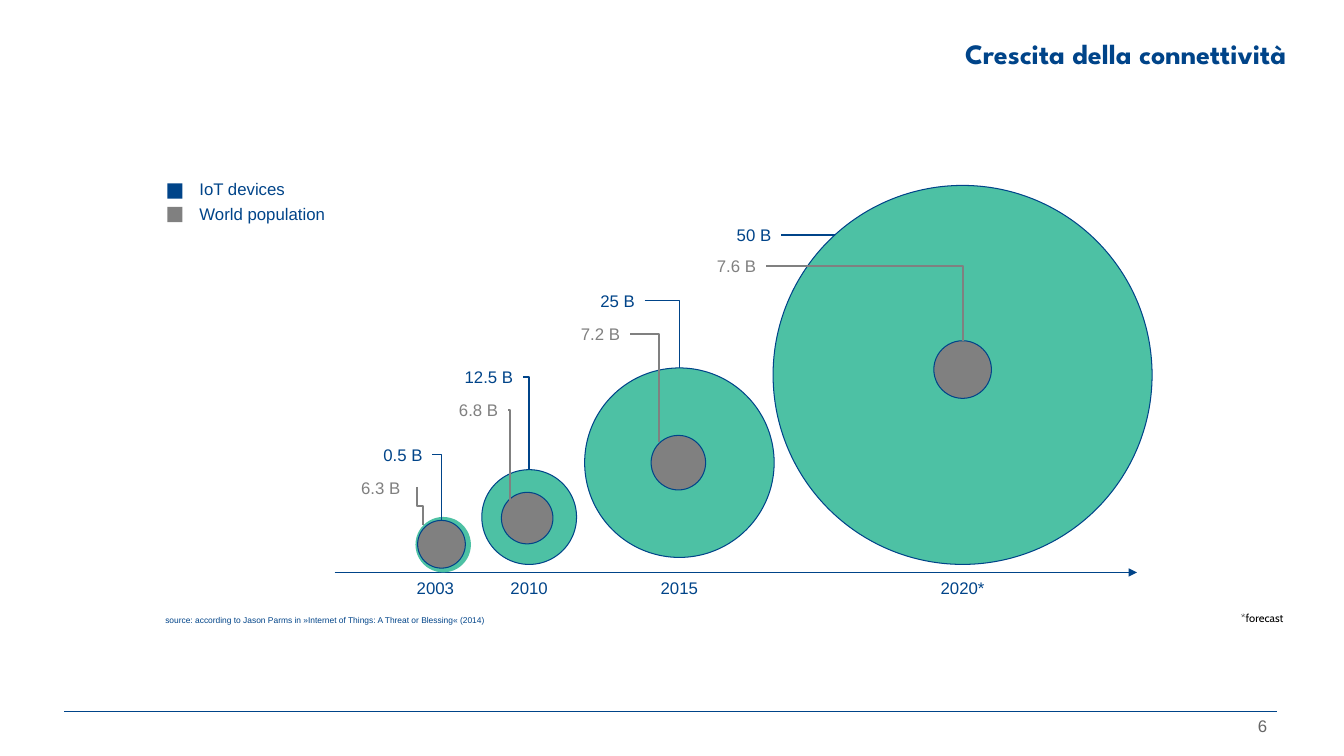
from pptx import Presentation
from pptx.dml.color import RGBColor
from pptx.enum.shapes import MSO_CONNECTOR as CONN, MSO_SHAPE as SHAPE
from pptx.enum.text import MSO_ANCHOR as ANCHOR, PP_ALIGN as ALIGN
from pptx.oxml.ns import qn
from pptx.util import Inches, Pt
from lxml.etree import SubElement

COLORS = {"blue": "004489", "green": "4DC1A4", "gray": "808080",
          "number": "666666", "black": "000000"}
W, H = Inches(13.333), Inches(7.5)
COLS = 40                 # square grid: 40 columns, 22.5 rows
PER_BILLION = 11.28 / 50  # bubble diameter in columns per billion
AXIS = 17.04              # row of the time axis

# year, label centre, devices (centre, row, diameter), people (centre, row, billions)
YEARS = [
    ("2015", 20.22, (20.22, 13.77, 25 * PER_BILLION), (20.19, 13.77, 7.2)),
    ("2020*", 28.65, (28.65, 11.16, 50 * PER_BILLION), (28.65, 11, 7.6)),
    ("2010", 15.75, (15.75, 15.39, 12.5 * PER_BILLION), (15.69, 15.42, 6.8)),
    ("2003", 12.96, (13.19, 16.21, 1.65), (13.14, 16.2, 6.3)),
]

# text, colour, left, right, middle row, point that the elbow reaches
CALLOUTS = [
    ("0.5 B", "blue", 7.56, 12.87, 13.53, (13.14, 15.51)),
    ("6.8 B", "gray", 9.06, 15.12, 12.21, (15.18, 14.91)),
    ("12.5 B", "blue", 9.63, 15.57, 11.22, (15.75, 13.98)),
    ("7.2 B", "gray", 13.35, 18.75, 9.95, (19.62, 13.17)),
    ("25 B", "blue", 13.77, 19.19, 8.95, (20.22, 10.95)),
    ("7.6 B", "gray", 16.53, 22.8, 7.92, (28.65, 10.14)),
]
LABEL_ROWS = 0.9


def grid(n):
    return round(n * W / COLS)


def rgb(name):
    return RGBColor.from_string(COLORS[name])


def add_text(s, text, x, y, w, h, color="blue", size=12, font="Arial",
             align=ALIGN.LEFT, anchor=ANCHOR.TOP, bold=False, tight=False):
    sp = s.shapes.add_textbox(*map(grid, (x, y, w, h)))
    tf = sp.text_frame
    tf.word_wrap = not tight
    tf.vertical_anchor = anchor
    if tight:
        tf.margin_left = tf.margin_right = tf.margin_top = tf.margin_bottom = 0
    p = tf.paragraphs[0]
    p.alignment = align
    r = p.add_run()
    r.text = text
    r.font.name, r.font.size, r.font.bold = font, Pt(size), bold
    r.font.color.rgb = rgb(color)
    return sp


def add_filled(s, kind, x, y, size, fill, outlined=False):
    sp = s.shapes.add_shape(kind, *map(grid, (x, y, size, size)))
    sp.shadow.inherit = False
    sp.fill.solid()
    sp.fill.fore_color.rgb = rgb(fill)
    if outlined:
        sp.line.color.rgb = rgb("blue")
        sp.line.width = Pt(0.75)
    else:
        sp.line.fill.background()


def add_bubble(s, cx, cy, size, fill, outlined=True):
    add_filled(s, SHAPE.OVAL, cx - size / 2, cy - size / 2, size, fill, outlined)


def add_line(s, x1, y1, x2, y2, color="blue", width=1, kind=CONN.STRAIGHT, arrow=False):
    c = s.shapes.add_connector(kind, *map(grid, (x1, y1, x2, y2)))
    c.line.color.rgb = rgb(color)
    c.line.width = Pt(width)
    if arrow:
        SubElement(c.line._get_or_add_ln(), qn("a:tailEnd"), type="triangle")
    SubElement(c._element.spPr, qn("a:effectLst"))
    return c


def add_label(s, text, color, left, right, mid):
    return add_text(s, text, left, mid - LABEL_ROWS / 2, right - left, LABEL_ROWS,
                    color, align=ALIGN.RIGHT)


def add_callout(s, text, color, left, right, mid, end):
    add_label(s, text, color, left, right, mid)
    c = add_line(s, right, mid, *end, color, 1.25 if color == "gray" else 1, CONN.ELBOW)
    c._element.spPr.find(qn("a:prstGeom")).set("prst", "bentConnector2")


def main():
    prs = Presentation()
    prs.slide_width, prs.slide_height = W, H
    s = prs.slides.add_slide(prs.slide_layouts[6])

    # Title and footer
    add_line(s, 1.92, 21.18, 38.01, 21.18)
    add_text(s, "6", 36.12, 21, 1.89, 1.2, "number",
             align=ALIGN.RIGHT, anchor=ANCHOR.MIDDLE)
    add_text(s, "Crescita della connettività", 21.15, 0.78, 17.43, 1.62, size=20,
             font="League Spartan", align=ALIGN.RIGHT, anchor=ANCHOR.MIDDLE, bold=True)

    # Time axis and bubbles
    add_line(s, 9.96, AXIS, 33.84, AXIS, arrow=True)
    for year, center, devices, (cx, cy, people) in YEARS:
        add_text(s, year, center - 1.26, AXIS, 2.52, 1.14, align=ALIGN.CENTER)
        add_bubble(s, *devices, "green", outlined=year != "2003")
        add_bubble(s, cx, cy, people * PER_BILLION, "gray")

    # Values with their leaders
    for callout in CALLOUTS:
        add_callout(s, *callout)
    label = add_label(s, "50 B", "blue", 17.01, 23.25, 6.99)
    add_line(s, 23.25, 6.99, 24.84, 6.99).begin_connect(label, 3)

    # The 2003 population leader steps down, so it is turned a quarter
    add_label(s, "6.3 B", "gray", 6.57, 12.21, 14.52)
    step = add_line(s, 13.08, 14.97, 11.94, 15.15, "gray", 1.25, CONN.ELBOW)
    step._element.spPr.find(qn("a:xfrm")).set("rot", str(270 * 60000))

    # Legend
    for i, (name, color) in enumerate([("IoT devices", "blue"), ("World population", "gray")]):
        add_filled(s, SHAPE.RECTANGLE, 4.98, 5.46 + 0.7 * i, 0.45, color)
        add_text(s, name, 5.64, 5.16 + 0.75 * i, 6.72, 1.14)

    # Source and note
    add_text(s, "source: according to Jason Parms in »Internet of Things: "
             "A Threat or Blessing« (2014)", 4.92, 18.3, 9.66, 0.3, size=6, tight=True)
    add_text(s, "*forecast", 36.93, 18.21, 1.65, 0.51, "black", 8, "Cabin", tight=True)

    prs.save("out.pptx")


if __name__ == "__main__":
    main()
